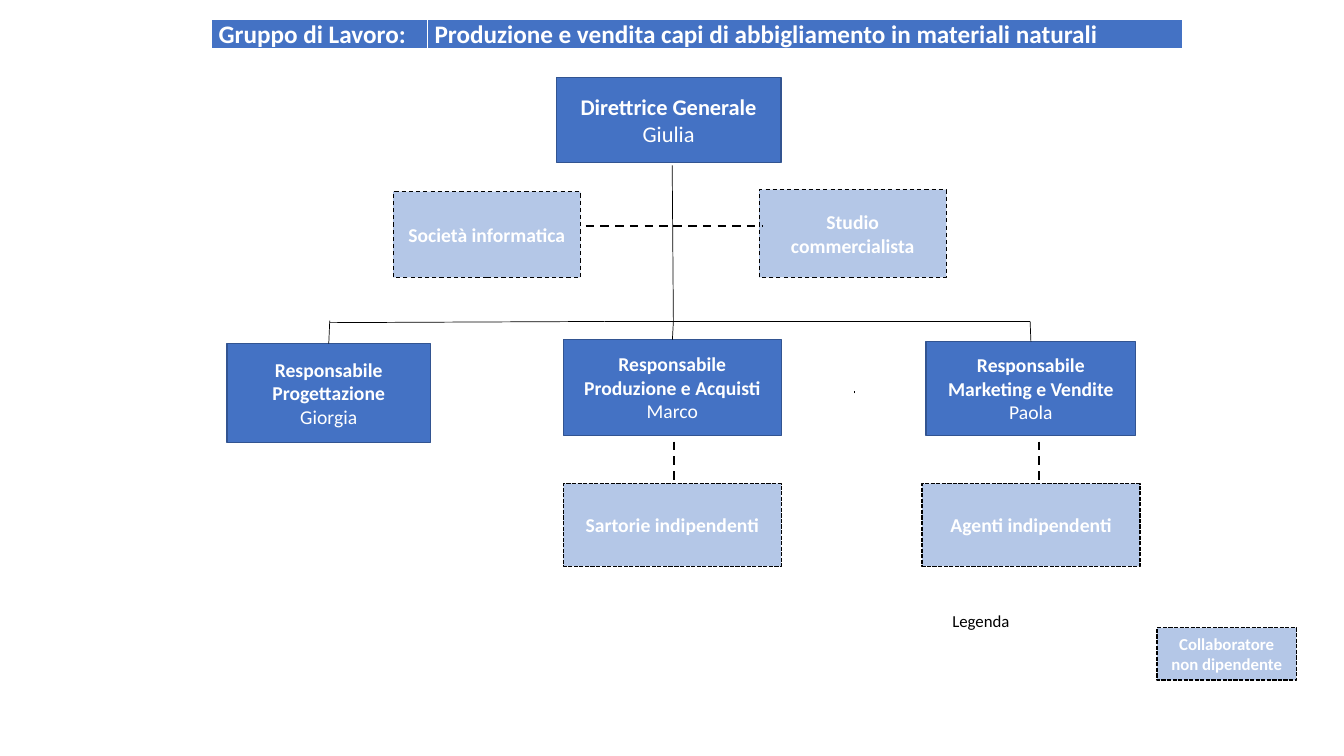
import lxml.etree
import pptx
import pptx.dml.color
import pptx.enum.dml
import pptx.enum.shapes
import pptx.enum.text
import pptx.oxml.ns
import pptx.util

Cm = pptx.util.Cm
Pt = pptx.util.Pt
Align = pptx.enum.text.PP_ALIGN
Anchor = pptx.enum.text.MSO_ANCHOR
Dash = pptx.enum.dml.MSO_LINE
qn = pptx.oxml.ns.qn

COLORS = {
    "staff": "4472C4",
    "staff_line": "325491",
    "external": "B4C7E7",
    "black": "000000",
    "white": "FFFFFF",
}
TOP, BOTTOM = 0, 2


def rgb(name):
    return pptx.dml.color.RGBColor.from_string(COLORS[name])


def write(paragraph, text, size=14, bold=False, color="white", align=Align.CENTER,
          font="Calibri"):
    paragraph.alignment = align
    run = paragraph.add_run()
    run.text = text
    run.font.name = font
    run.font.size = Pt(size)
    run.font.bold = bold
    run.font.color.rgb = rgb(color)


class OrgChart:
    def __init__(self, slide):
        self.slide = slide

    def box(self, left, top, width, height, fill, line, line_width, dash=None):
        shape = self.slide.shapes.add_shape(
            pptx.enum.shapes.MSO_SHAPE.RECTANGLE, Cm(left), Cm(top), Cm(width), Cm(height))
        shape.shadow.inherit = False
        shape.fill.solid()
        shape.fill.fore_color.rgb = rgb(fill)
        shape.line.color.rgb = rgb(line)
        shape.line.width = Pt(line_width)
        if dash:
            shape.line.dash_style = dash
        shape.text_frame.word_wrap = True
        shape.text_frame.vertical_anchor = Anchor.MIDDLE
        return shape

    def staff(self, left, top, width, height, role, person, size=14):
        """Box of an employee: role in bold, name below."""
        shape = self.box(left, top, width, height, "staff", "staff_line", 1)
        write(shape.text_frame.paragraphs[0], role, size, bold=True)
        write(shape.text_frame.add_paragraph(), person, size)
        return shape

    def external(self, left, top, width, height, label, size=14, line_width=1,
                 dash=Dash.SQUARE_DOT):
        """Dashed box of a collaborator who is not an employee."""
        shape = self.box(left, top, width, height, "external", "black", line_width, dash)
        write(shape.text_frame.paragraphs[0], label, size, bold=True)
        return shape

    def line(self, x1, y1, x2, y2, width=0.5, dash=None):
        connector = self.slide.shapes.add_connector(
            pptx.enum.shapes.MSO_CONNECTOR.STRAIGHT, Cm(x1), Cm(y1), Cm(x2), Cm(y2))
        connector.line.color.rgb = rgb("black")
        connector.line.width = Pt(width)
        if dash:
            connector.line.dash_style = dash
        lxml.etree.SubElement(connector._element.spPr, qn("a:effectLst"))
        return connector

    def dashed_line(self, x1, y1, x2, y2):
        return self.line(x1, y1, x2, y2, 1.5, Dash.DASH)

    def label(self, left, top, width, height, text, size):
        frame = self.slide.shapes.add_textbox(
            Cm(left), Cm(top), Cm(width), Cm(height)).text_frame
        frame.word_wrap = True
        frame.vertical_anchor = Anchor.MIDDLE
        frame.margin_left = frame.margin_right = frame.margin_top = frame.margin_bottom = 0
        write(frame.paragraphs[0], text, size, color="black", align=Align.LEFT)

    def title_table(self, left, top, height, columns):
        """One-row table; columns holds pairs of width and text."""
        total = sum(width for width, text in columns)
        table = self.slide.shapes.add_table(
            1, len(columns), Cm(left), Cm(top), Cm(total), Cm(height)).table
        table.first_row = table.horz_banding = False
        for index, (width, text) in enumerate(columns):
            table.columns[index].width = Cm(width)
            cell = table.cell(0, index)
            cell.margin_left = cell.margin_right = Cm(0.18)
            cell.margin_top = cell.margin_bottom = 0
            cell.fill.solid()
            cell.fill.fore_color.rgb = rgb("staff")
            self.cell_borders(cell, {"lnL": 1, "lnR": 1, "lnT": 1, "lnB": 3})
            write(cell.text_frame.paragraphs[0], text, 18, bold=True, align=Align.LEFT)

    def cell_borders(self, cell, widths):
        properties = cell._tc.get_or_add_tcPr()
        for position, (side, width) in enumerate(widths.items()):
            border = lxml.etree.Element(qn("a:" + side), w=str(Pt(width)))
            fill = lxml.etree.SubElement(border, qn("a:solidFill"))
            lxml.etree.SubElement(fill, qn("a:srgbClr"), val=COLORS["white"])
            properties.insert(position, border)


def main():
    presentation = pptx.Presentation()
    presentation.slide_width = Cm(33.87)
    presentation.slide_height = Cm(19.05)
    chart = OrgChart(presentation.slides.add_slide(presentation.slide_layouts[6]))

    chart.title_table(5.33, 0.48, 0.76, [
        (5.44, "Gruppo di Lavoro:"),
        (19.02, "Produzione e vendita capi di abbigliamento in materiali naturali"),
    ])

    chart.staff(14.02, 1.96, 5.66, 2.13, "Direttrice Generale", "Giulia", size=16)
    design = chart.staff(5.72, 8.66, 5.13, 2.49, "Responsabile Progettazione", "Giorgia")
    production = chart.staff(14.2, 8.56, 5.49, 2.41,
                             "Responsabile Produzione e Acquisti", "Marco")
    marketing = chart.staff(23.34, 8.61, 5.28, 2.36,
                            "Responsabile Marketing e Vendite", "Paola")

    chart.external(9.91, 4.83, 4.72, 2.16, "Società informatica",
                   line_width=0.75, dash=Dash.DASH)
    chart.external(19.13, 4.78, 4.72, 2.21, "Studio commercialista",
                   line_width=0.75, dash=Dash.DASH)
    for left, label in ((14.2, "Sartorie indipendenti"), (23.24, "Agenti indipendenti")):
        chart.external(left, 12.19, 5.49, 2.08, label)

    trunk_x, bar_y = 16.97, 8.1
    chart.line(16.94, 4.17, trunk_x, bar_y)
    bar_left, bar_middle, bar_right = 8.31, 15.24, 25.96
    chart.line(bar_middle, bar_y, bar_left, 8.13)
    chart.line(bar_middle, bar_y, bar_right, bar_y)
    for x, y, manager in ((bar_left, 8.08, design), (trunk_x, bar_y, production),
                          (bar_right, bar_y, marketing)):
        chart.line(x, y, x, manager.top.cm).end_connect(manager, TOP)
    chart.line(21.54, 9.91, 21.54, 9.86)

    for x1, x2 in ((14.76, trunk_x), (trunk_x, 19.23)):
        chart.dashed_line(x1, 5.69, x2, 5.69)
    for x in (16.99, 26.19):
        chart.dashed_line(x, 11.13, x, 12.12)

    chart.label(24, 15.35, 2.5, 0.6, "Legenda", 12)
    chart.external(29.16, 15.82, 3.51, 1.32, "Collaboratore non dipendente", size=12)

    presentation.save("out.pptx")


if __name__ == "__main__":
    main()
